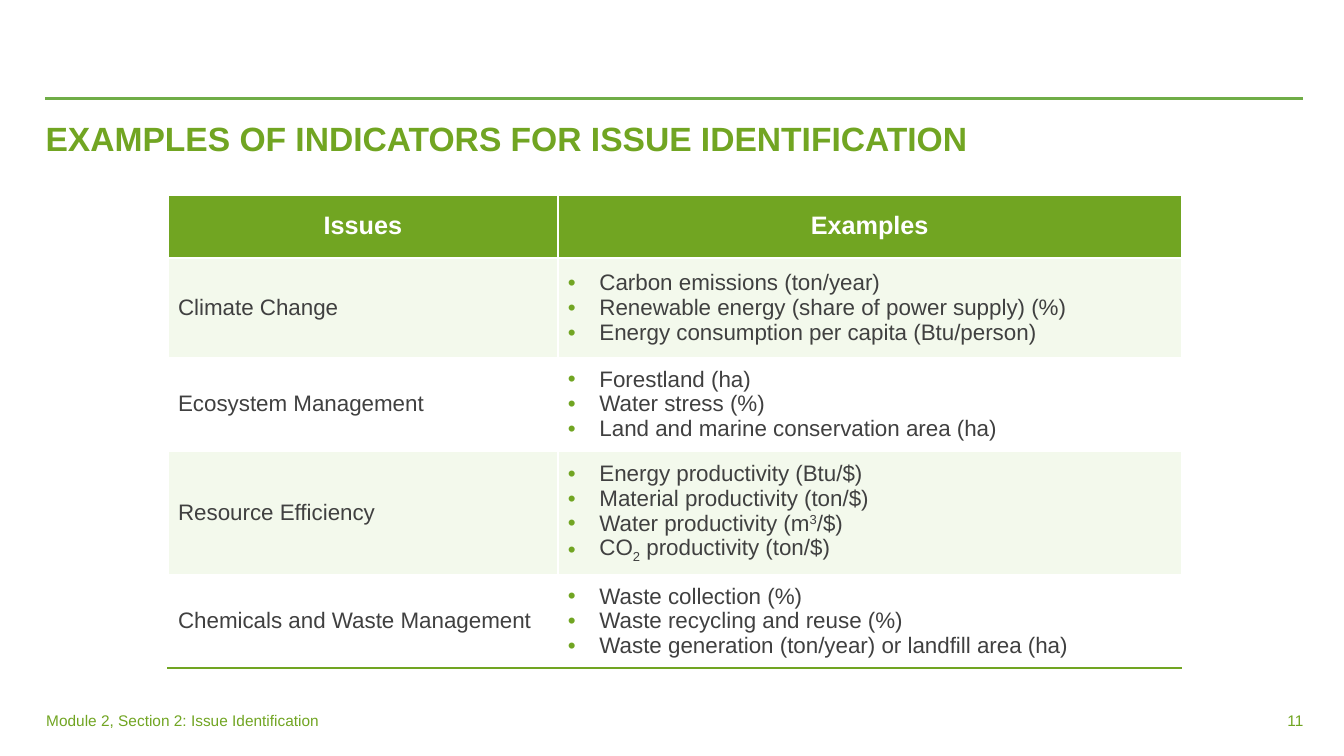
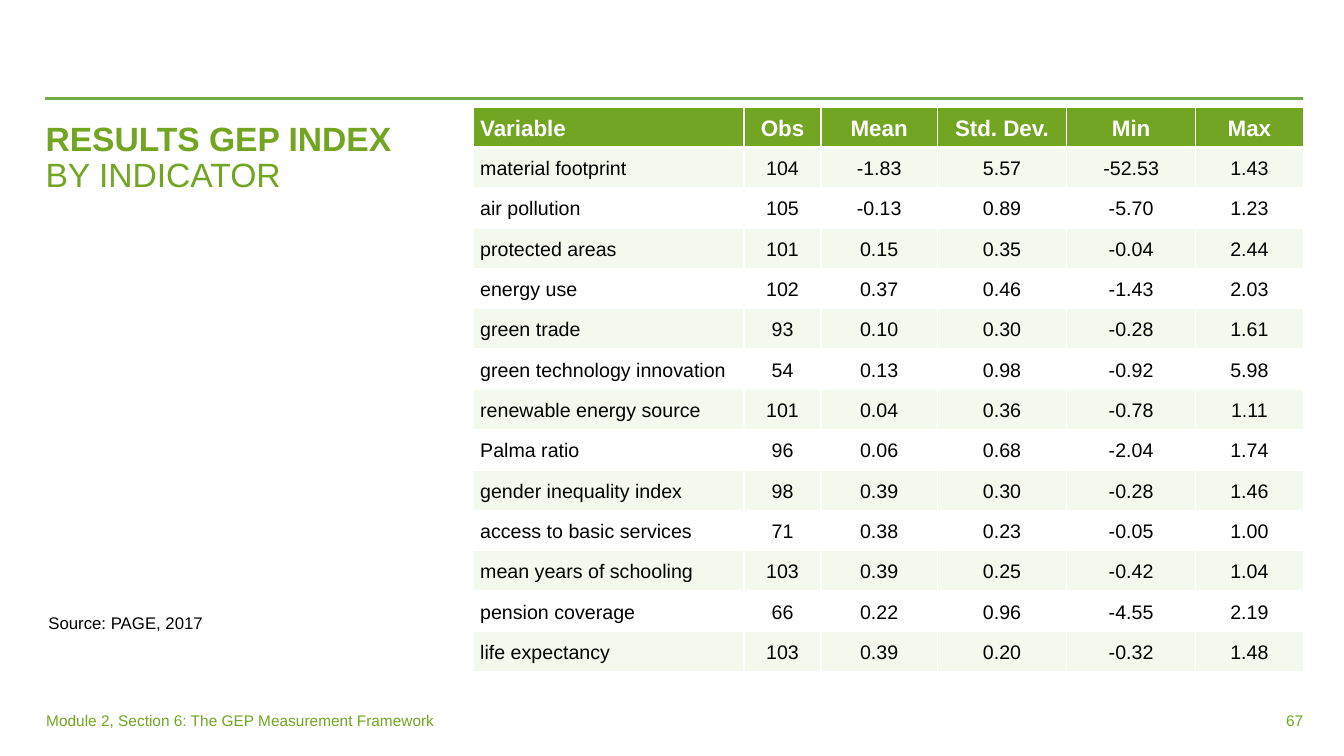
from lxml.etree import SubElement
from pptx import Presentation
from pptx.dml.color import RGBColor
from pptx.enum.shapes import MSO_CONNECTOR
from pptx.enum.text import MSO_ANCHOR, MSO_AUTO_SIZE, PP_ALIGN
from pptx.oxml.ns import qn
from pptx.util import Pt

COLORS = {"green": "71A522", "rule": "70AD47", "stripe": "F3F9EC",
          "white": "FFFFFF", "grey": "404040", "black": "000000"}
FORMATS = {
    "title": {"size": Pt(24), "bold": True},
    "subtitle": {"size": Pt(24), "bold": False},
    "issue head": {"size": Pt(18), "bold": True},
    "issue": {"size": Pt(16), "bold": False},
    "result head": {"size": Pt(16), "bold": True},
    "result": {"size": Pt(14), "bold": False},
    "source": {"size": Pt(12), "bold": False},
    "footer": {"size": Pt(11), "bold": False},
}
LEFT, RIGHT = 32.5, 931
BULLET_INDENT = Pt(22.5)
BASELINES = {"3": "30000", "2": "-25000"}


def add_run(paragraph, text, style, color):
    run = paragraph.add_run()
    run.text = text
    for key, value in {"name": "Arial", **FORMATS[style]}.items():
        setattr(run.font, key, value)
    run.font.color.rgb = RGBColor.from_string(COLORS[color])
    return run


def style_cell(cell, fill, edges):
    """Edges map L, R, T and B to a colour name and a width in points."""
    cell.vertical_anchor = MSO_ANCHOR.MIDDLE
    properties = cell._tc.get_or_add_tcPr()
    for side in "LRTB":
        color, width = edges[side]
        line = SubElement(properties, qn(f"a:ln{side}"), w=str(Pt(width)))
        SubElement(SubElement(line, qn("a:solidFill")), qn("a:srgbClr"), val=COLORS[color])
    cell.fill.solid()
    cell.fill.fore_color.rgb = RGBColor.from_string(COLORS[fill])


prs = Presentation()
prs.slide_width, prs.slide_height = Pt(960), Pt(540)

# Shared frame: rule, title and footer
pages = [
    ("EXAMPLES OF INDICATORS FOR ISSUE IDENTIFICATION", "",
     "Module 2, Section 2: Issue Identification", "11"),
    ("RESULTS GEP INDEX", "BY INDICATOR",
     "Module 2, Section 6: The GEP Measurement Framework", "67"),
]
slides = []
for heading, subheading, section, number in pages:
    slide = prs.slides.add_slide(prs.slide_layouts[5])
    slides.append(slide)

    rule = slide.shapes.add_connector(
        MSO_CONNECTOR.STRAIGHT, Pt(LEFT), Pt(70.5), Pt(RIGHT), Pt(70.5))
    rule.line.color.rgb = RGBColor.from_string(COLORS["rule"])
    rule.line.width = Pt(2)
    SubElement(rule._element.spPr, qn("a:effectLst"))

    title = slide.shapes.title
    title_place = {"left": Pt(LEFT), "top": Pt(83.5), "width": Pt(RIGHT - LEFT), "height": Pt(75)}
    for key, value in title_place.items():
        setattr(title, key, value)
    title_frame = {"margin_left": 0, "margin_right": 0, "vertical_anchor": MSO_ANCHOR.TOP,
                   "auto_size": MSO_AUTO_SIZE.NONE, "word_wrap": True}
    for key, value in title_frame.items():
        setattr(title.text_frame, key, value)
    title_line = title.text_frame.paragraphs[0]
    title_line.alignment = PP_ALIGN.LEFT
    title_line.line_spacing = 0.9
    add_run(title_line, heading, "title", "green")
    if subheading:
        title_line.add_line_break()
        add_run(title_line, subheading, "subtitle", "green")

    for text, left, width, alignment in [
        (section, LEFT + 0.5, 289, PP_ALIGN.LEFT),
        (number, RIGHT - 80, 80, PP_ALIGN.RIGHT),
    ]:
        footer = slide.shapes.add_textbox(Pt(left), Pt(500.5), Pt(width), Pt(28.5)).text_frame
        footer_frame = {"word_wrap": True, "vertical_anchor": MSO_ANCHOR.MIDDLE,
                        "margin_left": 0, "margin_right": 0}
        for key, value in footer_frame.items():
            setattr(footer, key, value)
        footer.paragraphs[0].alignment = alignment
        add_run(footer.paragraphs[0], text, "footer", "green")

issue_slide, result_slide = slides

# Issues and their example indicators; bars set off raised or lowered digits
issues = [
    ("Climate Change", 71.5, [
        "Carbon emissions (ton/year)",
        "Renewable energy (share of power supply) (%)",
        "Energy consumption per capita (Btu/person)"]),
    ("Ecosystem Management", 66.5, [
        "Forestland (ha)",
        "Water stress (%)",
        "Land and marine conservation area (ha)"]),
    ("Resource Efficiency", 88.5, [
        "Energy productivity (Btu/$)",
        "Material productivity (ton/$)",
        "Water productivity (m|3|/$)",
        "CO|2| productivity (ton/$)"]),
    ("Chemicals and Waste Management", 66.5, [
        "Waste collection (%)",
        "Waste recycling and reuse (%)",
        "Waste generation (ton/year) or landfill area (ha)"]),
]
issue_widths = [278.5, 445.5]
issue_heights = [45] + [height for _, height, _ in issues]
issue_table = issue_slide.shapes.add_table(
    len(issue_heights), 2, Pt(120), Pt(139), Pt(sum(issue_widths)), Pt(sum(issue_heights))).table
issue_table.horz_banding = False
for column, width in zip(issue_table.columns, issue_widths):
    column.width = Pt(width)
for row, height in zip(issue_table.rows, issue_heights):
    row.height = Pt(height)

white_edges = dict.fromkeys("LRTB", ("white", 1.5))
for cell, text in zip(issue_table.rows[0].cells, ["Issues", "Examples"]):
    style_cell(cell, "green", white_edges)
    header = cell.text_frame.paragraphs[0]
    header.alignment = PP_ALIGN.CENTER
    add_run(header, text, "issue head", "white")

for index, (issue, _, examples) in enumerate(issues, start=1):
    issue_cell, example_cell = issue_table.rows[index].cells
    edges = {**white_edges, "B": ("green", 1.5)} if index == len(issues) else white_edges
    for cell in (issue_cell, example_cell):
        style_cell(cell, "stripe" if index % 2 else "white", edges)
    add_run(issue_cell.text_frame.paragraphs[0], issue, "issue", "grey")
    for position, example in enumerate(examples):
        frame = example_cell.text_frame
        bullet = frame.add_paragraph() if position else frame.paragraphs[0]
        properties = bullet._p.get_or_add_pPr()
        properties.set("marL", str(BULLET_INDENT))
        properties.set("indent", str(-BULLET_INDENT))
        bullet_color = SubElement(properties, qn("a:buClr"))
        SubElement(bullet_color, qn("a:srgbClr"), val=COLORS["green"])
        SubElement(properties, qn("a:buFont"), typeface="Arial")
        SubElement(properties, qn("a:buChar"), char="•")
        for piece in example.split("|"):
            run = add_run(bullet, piece, "issue", "grey")
            if piece in BASELINES:
                run.font._element.set("baseline", BASELINES[piece])

# Index results by indicator
results = [
    ("Variable", "Obs", "Mean", "Std. Dev.", "Min", "Max"),
    ("material footprint", "104", "-1.83", "5.57", "-52.53", "1.43"),
    ("air pollution", "105", "-0.13", "0.89", "-5.70", "1.23"),
    ("protected areas", "101", "0.15", "0.35", "-0.04", "2.44"),
    ("energy use", "102", "0.37", "0.46", "-1.43", "2.03"),
    ("green trade", "93", "0.10", "0.30", "-0.28", "1.61"),
    ("green technology innovation", "54", "0.13", "0.98", "-0.92", "5.98"),
    ("renewable energy source", "101", "0.04", "0.36", "-0.78", "1.11"),
    ("Palma ratio", "96", "0.06", "0.68", "-2.04", "1.74"),
    ("gender inequality index", "98", "0.39", "0.30", "-0.28", "1.46"),
    ("access to basic services", "71", "0.38", "0.23", "-0.05", "1.00"),
    ("mean years of schooling", "103", "0.39", "0.25", "-0.42", "1.04"),
    ("pension coverage", "66", "0.22", "0.96", "-4.55", "2.19"),
    ("life expectancy", "103", "0.39", "0.20", "-0.32", "1.48"),
]
result_widths = [193.5, 55, 83, 92.5, 92, 77]
result_height = 28.8
result_table = result_slide.shapes.add_table(
    len(results), len(result_widths), Pt(RIGHT - sum(result_widths)), Pt(76.5),
    Pt(sum(result_widths)), Pt(result_height * len(results))).table
result_table.horz_banding = False
for column, width in zip(result_table.columns, result_widths):
    column.width = Pt(width)

thin_edges = dict.fromkeys("LRTB", ("white", 1))
header_gap = ("white", 3)
cell_margins = {"margin_left": Pt(5), "margin_right": Pt(5), "margin_top": 0, "margin_bottom": 0}
for index, values in enumerate(results):
    if index == 0:
        style, color, fill = "result head", "white", "green"
        edges = {**thin_edges, "B": header_gap}
    else:
        style, color, fill = "result", "black", "stripe" if index % 2 else "white"
        edges = {**thin_edges, "T": header_gap} if index == 1 else thin_edges
    row = result_table.rows[index]
    row.height = Pt(result_height)
    for position, (cell, value) in enumerate(zip(row.cells, values)):
        style_cell(cell, fill, edges)
        for key, margin in cell_margins.items():
            setattr(cell, key, margin)
        entry = cell.text_frame.paragraphs[0]
        entry.alignment = PP_ALIGN.CENTER if position else PP_ALIGN.LEFT
        entry.line_spacing = 1.1
        add_run(entry, value, style, color)

# Source line
source = result_slide.shapes.add_textbox(Pt(27.5), Pt(434), Pt(225), Pt(22)).text_frame
source.word_wrap = True
add_run(source.paragraphs[0], "Source: PAGE, 2017", "source", "black")

prs.save("out.pptx")
